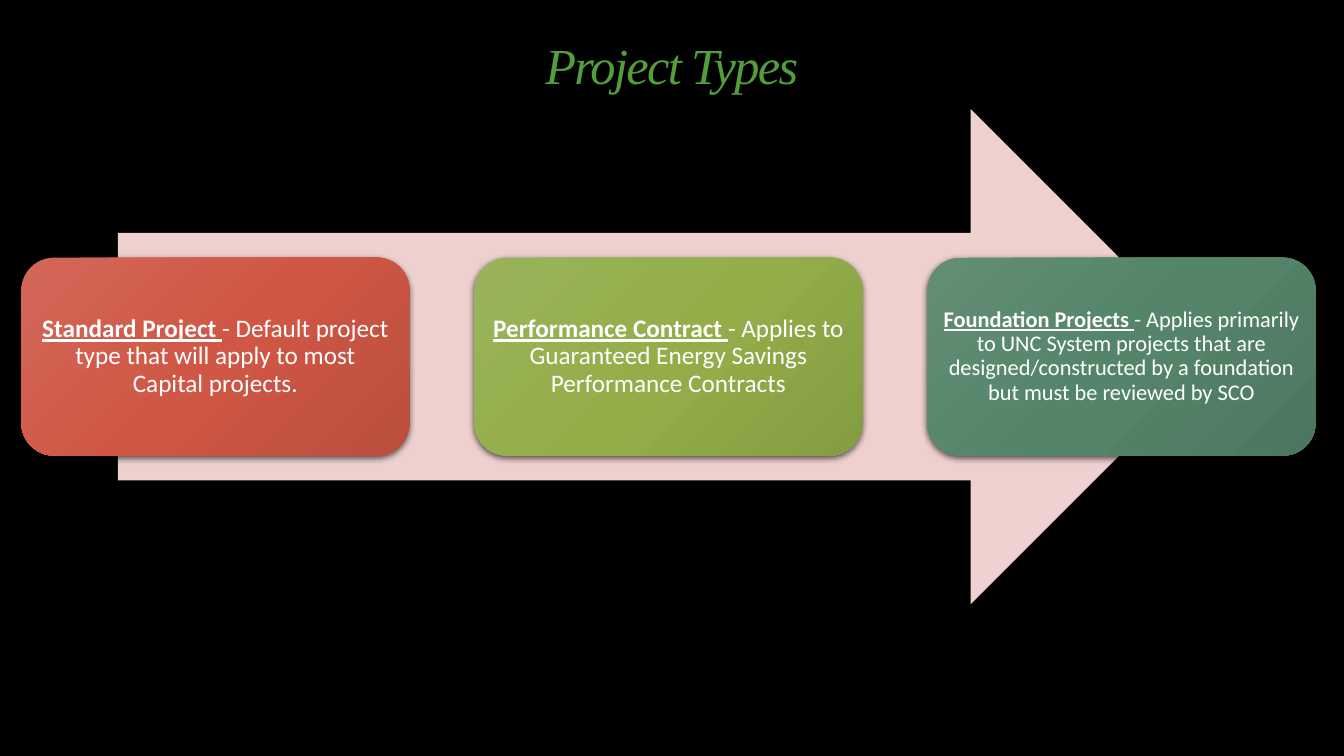
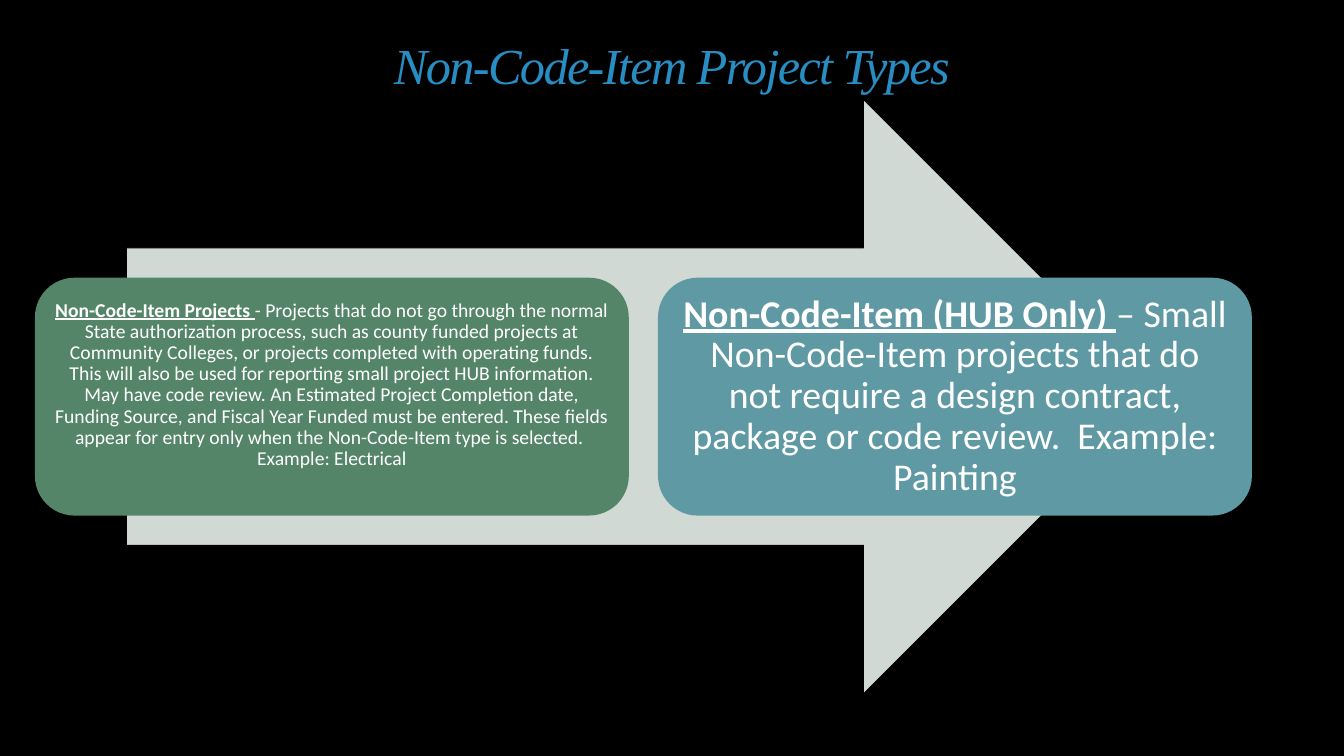
import copy
from dataclasses import dataclass

import pptx
import pptx.dml.color
import pptx.enum.shapes
import pptx.enum.text
import pptx.oxml
import pptx.oxml.ns
import pptx.util

SHAPE = pptx.enum.shapes.MSO_SHAPE
ALIGN = pptx.enum.text.PP_ALIGN
ANCHOR = pptx.enum.text.MSO_ANCHOR

SLIDE_WIDTH, SLIDE_HEIGHT = pptx.util.Inches(13.33), pptx.util.Inches(7.5)
CARD_SHARE = 0.4  # card height as a share of the arrow height

COLORS = {
    "background": "000000",
    "text": "FFFFFF",
    "green title": "549E39",
    "blue title": "288DC2",
    "pale rose": "EED1CF",
    "pale sage": "D1D9D4",
    "sage": "558569",
    "teal": "5E99A4",
    "red light": "D36759", "red": "D05745", "red dark": "BB4E3E",
    "lime light": "9AB35B", "lime": "93AE49", "lime dark": "849D42",
    "sage light": "638E74", "sage dark": "4C775E",
}

TITLE_FONT = {"name": "Times New Roman", "size": pptx.util.Pt(36), "italic": True}
CARD_FONT = {"name": "Calibri"}
TERM_FONT = {"bold": True, "underline": True}

SHADOW_XML = (
    f'<a:outerShdw {pptx.oxml.ns.nsdecls("a")} blurRad="57150" dist="19050" '
    'dir="5400000" algn="ctr" rotWithShape="0">'
    '<a:srgbClr val="000000"><a:alpha val="63000"/></a:srgbClr></a:outerShdw>'
)


@dataclass(frozen=True)
class Box:
    """Left, top, width and height in percent of the slide."""
    left: float
    top: float
    width: float
    height: float

    def emu(self) -> tuple[int, int, int, int]:
        return (int(SLIDE_WIDTH * self.left / 100), int(SLIDE_HEIGHT * self.top / 100),
                int(SLIDE_WIDTH * self.width / 100), int(SLIDE_HEIGHT * self.height / 100))


TITLE_BOX = Box(6.85, 1.35, 86.27, 15.47)


@dataclass(frozen=True)
class Card:
    term: str
    meaning: str
    size: float
    colors: tuple[str, ...]  # one colour is solid, three make a shaded card
    inset: float = 0.07
    extra_bottom: float = 0


@dataclass(frozen=True)
class ArrowSlide:
    title: str
    title_color: str
    arrow: Box
    arrow_color: str
    arrow_outlined: bool
    cards_left: float
    card_width: float
    card_gap: float
    cards: tuple[Card, ...]


SLIDES = (
    ArrowSlide(
        "Project Types", "green title", Box(8.78, 14.43, 81.87, 65.5), "pale rose", False,
        1.57, 28.9, 4.81,
        (
            Card("Standard Project ",
                 "- Default project type that will apply to most Capital projects.",
                 18, ("red light", "red", "red dark")),
            Card("Performance Contract ",
                 "- Applies to Guaranteed Energy Savings Performance Contracts",
                 18, ("lime light", "lime", "lime dark")),
            Card("Foundation Projects ",
                 "- Applies primarily to UNC System projects that are designed/constructed "
                 "by a foundation but must be reviewed by SCO",
                 16, ("sage light", "sage", "sage dark"), 0.05),
        ),
    ),
    ArrowSlide(
        "Non-Code-Item Project Types", "blue title", Box(9.4, 13.13, 76.97, 78.67),
        "pale sage", True, 2.6, 44.19, 2.17,
        (
            Card("Non-Code-Item Projects ",
                 "- Projects that do not go through the normal State authorization process, "
                 "such as county funded projects at Community Colleges, or projects completed "
                 "with operating funds. This will also be used for reporting small project HUB "
                 "information. May have code review. An Estimated Project Completion date, "
                 "Funding Source, and Fiscal Year Funded must be entered. These fields appear "
                 "for entry only when the Non-Code-Item type is selected.  Example: Electrical",
                 14, ("sage",), 0.06, 0.23),
            Card("Non-Code-Item (HUB Only) ",
                 "– Small Non-Code-Item projects that do not require a design contract, "
                 "package or code review.  Example: Painting",
                 27, ("teal",), 0.11),
        ),
    ),
)


def rgb(name: str) -> pptx.dml.color.RGBColor:
    return pptx.dml.color.RGBColor.from_string(COLORS[name])


def apply(target, values: dict) -> None:
    for name, value in values.items():
        setattr(target, name, value)


def add_run(paragraph, text: str, color: str, values: dict):
    run = paragraph.add_run()
    run.text = text
    apply(run.font, values)
    run.font.color.rgb = rgb(color)
    return run


def add_title(slide, text: str, color: str) -> None:
    frame = slide.shapes.add_textbox(*TITLE_BOX.emu()).text_frame
    apply(frame, {"word_wrap": True, "vertical_anchor": ANCHOR.MIDDLE})
    heading = frame.paragraphs[0]
    apply(heading, {"alignment": ALIGN.CENTER, "line_spacing": 0.85})
    run = add_run(heading, text, color, TITLE_FONT)
    run.font._element.set("spc", "-120")  # tightened letters


def add_filled(slide, kind, box: Box, colors: tuple[str, ...]):
    shape = slide.shapes.add_shape(kind, *box.emu())
    shape.shadow.inherit = False
    shape.line.fill.background()
    if len(colors) == 1:
        shape.fill.solid()
        shape.fill.fore_color.rgb = rgb(colors[0])
        return shape
    # Shading runs from top left to bottom right
    shape.fill.gradient()
    shape.fill.gradient_angle = 315
    properties = shape._element.spPr
    stop_list = properties.find(".//" + pptx.oxml.ns.qn("a:gsLst"))
    stop_list.append(copy.deepcopy(stop_list[-1]))
    for index, (stop, name) in enumerate(zip(shape.fill.gradient_stops, colors)):
        stop.position = index / (len(colors) - 1)
        stop.color.rgb = rgb(name)
    # Shaded cards also cast a soft shadow
    effects = properties.find(pptx.oxml.ns.qn("a:effectLst"))
    effects.append(pptx.oxml.parse_xml(SHADOW_XML))
    return shape


def add_card(slide, card: Card, box: Box) -> None:
    frame = add_filled(slide, SHAPE.ROUNDED_RECTANGLE, box, card.colors).text_frame
    inset = pptx.util.Inches(card.inset)
    apply(frame, {
        "word_wrap": True, "vertical_anchor": ANCHOR.MIDDLE,
        "margin_left": inset, "margin_right": inset, "margin_top": inset,
        "margin_bottom": pptx.util.Inches(card.inset + card.extra_bottom),
    })
    definition = frame.paragraphs[0]
    apply(definition, {"alignment": ALIGN.CENTER, "line_spacing": 0.9})
    font = CARD_FONT | {"size": pptx.util.Pt(card.size)}
    add_run(definition, card.term, "text", font | TERM_FONT)
    add_run(definition, card.meaning, "text", font)


def add_arrow_slide(deck, content: ArrowSlide) -> None:
    slide = deck.slides.add_slide(deck.slide_layouts[6])
    slide.background.fill.solid()
    slide.background.fill.fore_color.rgb = rgb("background")
    add_title(slide, content.title, content.title_color)

    # Arrow behind the cards
    arrow = add_filled(slide, SHAPE.RIGHT_ARROW, content.arrow, (content.arrow_color,))
    if content.arrow_outlined:
        arrow.line.color.rgb = rgb("background")
        arrow.line.width = pptx.util.Pt(0.75)

    # Cards in a row, centred on the arrow's shaft
    height = content.arrow.height * CARD_SHARE
    top = content.arrow.top + (content.arrow.height - height) / 2
    for column, card in enumerate(content.cards):
        left = content.cards_left + column * (content.card_width + content.card_gap)
        add_card(slide, card, Box(left, top, content.card_width, height))


def main() -> None:
    deck = pptx.Presentation()
    apply(deck, {"slide_width": SLIDE_WIDTH, "slide_height": SLIDE_HEIGHT})
    for content in SLIDES:
        add_arrow_slide(deck, content)
    deck.save("out.pptx")


if __name__ == "__main__":
    main()
